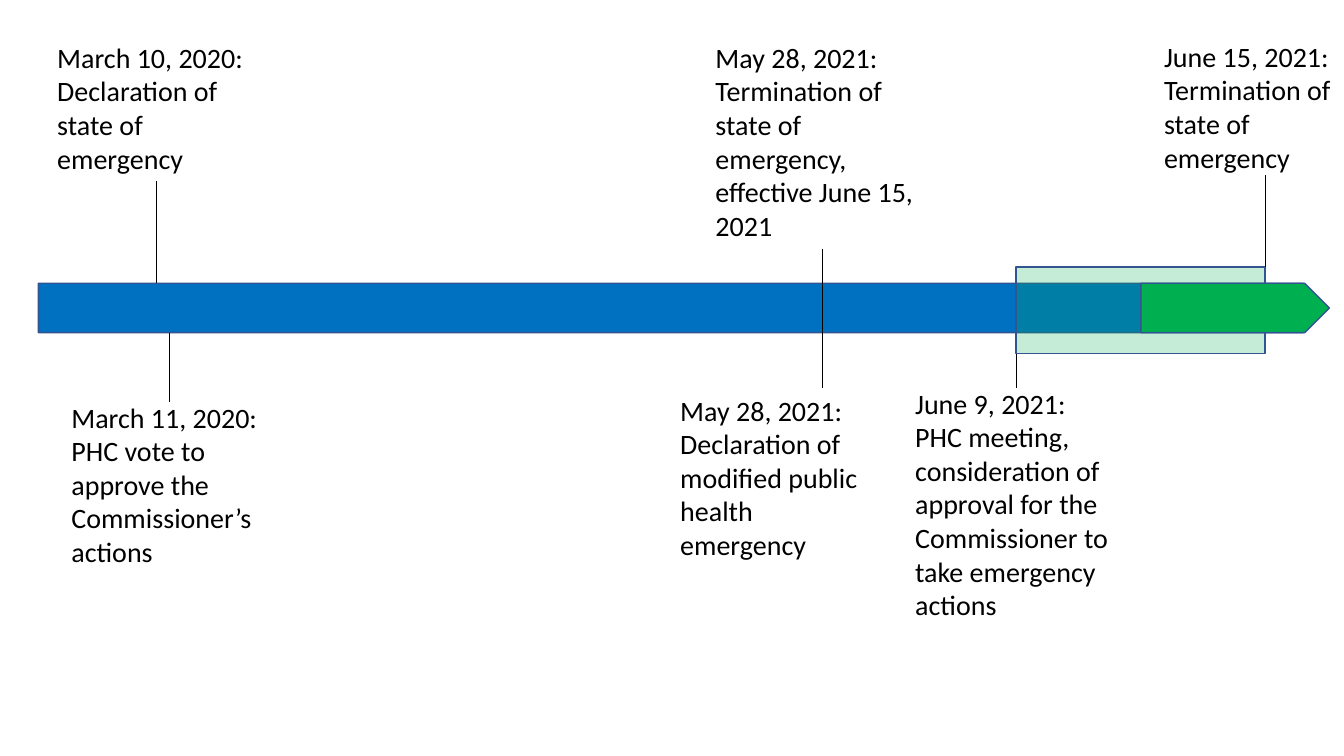
from pptx import Presentation
from pptx.dml.color import RGBColor
from pptx.enum.shapes import MSO_CONNECTOR, MSO_SHAPE
from pptx.enum.text import MSO_AUTO_SIZE
from pptx.oxml.ns import qn
from pptx.util import Pt
from lxml import etree

PENTAGON, RECTANGLE = MSO_SHAPE.PENTAGON, MSO_SHAPE.RECTANGLE
STRAIGHT = MSO_CONNECTOR.STRAIGHT
GROW = MSO_AUTO_SIZE.SHAPE_TO_FIT_TEXT

# Content: left, top, width, height of each label, then its paragraphs
EVENTS = [
    ((33.8, 25.2, 155.5, 104.4),
     ["March 10, 2020:", "Declaration of state of emergency"]),
    ((43.9, 282.2, 155.5, 128.2),
     ["March 11, 2020:", "PHC vote to approve the Commissioner’s actions"]),
    ((504, 25.2, 165.6, 152.6),
     ["May 28, 2021: Termination of state of emergency, effective June 15, 2021"]),
    ((478.8, 277.2, 155.5, 128.2),
     ["May 28, 2021: Declaration of modified public health emergency"]),
    ((646.6, 272.2, 155.5, 177.1),
     ["June 9, 2021:", "PHC meeting, consideration of approval for the "
      "Commissioner to take emergency actions"]),
    ((824.4, 24.5, 165.6, 104.4),
     ["June 15, 2021: Termination of state of emergency"]),
]

THEME = {
    "font": "Calibri", "size": Pt(20),
    "text": RGBColor(0x00, 0x00, 0x00),
    "emergency": RGBColor(0x00, 0x70, 0xC0),
    "modified": RGBColor(0x00, 0xB0, 0x50),
    "outline": RGBColor(0x32, 0x54, 0x91),
    "outline_width": Pt(1), "stem_width": Pt(0.5),
}

# Timeline geometry
BAR_TOP, BAR_HEIGHT = 202.3, 35.3
BAR_BOTTOM = BAR_TOP + BAR_HEIGHT
EMERGENCY_BAR = (27.4, BAR_TOP, 920.9, BAR_HEIGHT)
MODIFIED_BAR = (815, BAR_TOP, 134.6, BAR_HEIGHT)
BAND_LEFT, BAND_TOP, BAND_WIDTH, BAND_HEIGHT = 725.8, 190.8, 177.8, 61.9
REVIEW_BAND = (BAND_LEFT, BAND_TOP, BAND_WIDTH, BAND_HEIGHT)
LOWER_LABELS = 277.2

# Stems: x, top, bottom
STEMS = [
    (111.6, 129.6, BAR_TOP),
    (121, BAR_BOTTOM, 287.3),
    (587.5, 177.8, LOWER_LABELS),
    (BAND_LEFT, BAND_TOP + BAND_HEIGHT, LOWER_LABELS),
    (BAND_LEFT + BAND_WIDTH, 125.3, BAND_TOP),
]


def add_label(slide, box, paragraphs):
    frame = slide.shapes.add_textbox(*map(Pt, box)).text_frame
    frame.word_wrap = True
    frame.auto_size = GROW
    for index, words in enumerate(paragraphs):
        paragraph = frame.add_paragraph() if index else frame.paragraphs[0]
        run = paragraph.add_run()
        run.text = words
        run.font.name = THEME["font"]
        run.font.size = THEME["size"]
        run.font.color.rgb = THEME["text"]


def add_period(slide, preset, box, color, opacity=None):
    period = slide.shapes.add_shape(preset, *map(Pt, box))
    period.shadow.inherit = False
    period.fill.solid()
    period.fill.fore_color.rgb = color
    period.line.color.rgb = THEME["outline"]
    period.line.width = THEME["outline_width"]
    if opacity is not None:
        fill_color = period.fill._xPr.find(qn("a:solidFill"))[0]
        etree.SubElement(fill_color, qn("a:alpha"), val=str(opacity * 1000))


def add_stem(slide, x, top, bottom):
    stem = slide.shapes.add_connector(STRAIGHT, Pt(x), Pt(top), Pt(x), Pt(bottom))
    stem.line.color.rgb = THEME["text"]
    stem.line.width = THEME["stem_width"]
    etree.SubElement(stem._element.spPr, qn("a:effectLst"))


def main():
    deck = Presentation()
    deck.slide_width, deck.slide_height = Pt(960), Pt(540)
    slide = deck.slides.add_slide(deck.slide_layouts.get_by_name("Blank"))

    # Event labels
    for box, paragraphs in EVENTS:
        add_label(slide, box, paragraphs)

    # Emergency period and the review band over it
    add_period(slide, PENTAGON, EMERGENCY_BAR, THEME["emergency"])
    add_period(slide, RECTANGLE, REVIEW_BAND, THEME["modified"], opacity=23)

    # Stems from labels to timeline
    for stem in STEMS:
        add_stem(slide, *stem)

    # Modified emergency period
    add_period(slide, PENTAGON, MODIFIED_BAR, THEME["modified"])

    deck.save("out.pptx")


if __name__ == "__main__":
    main()
